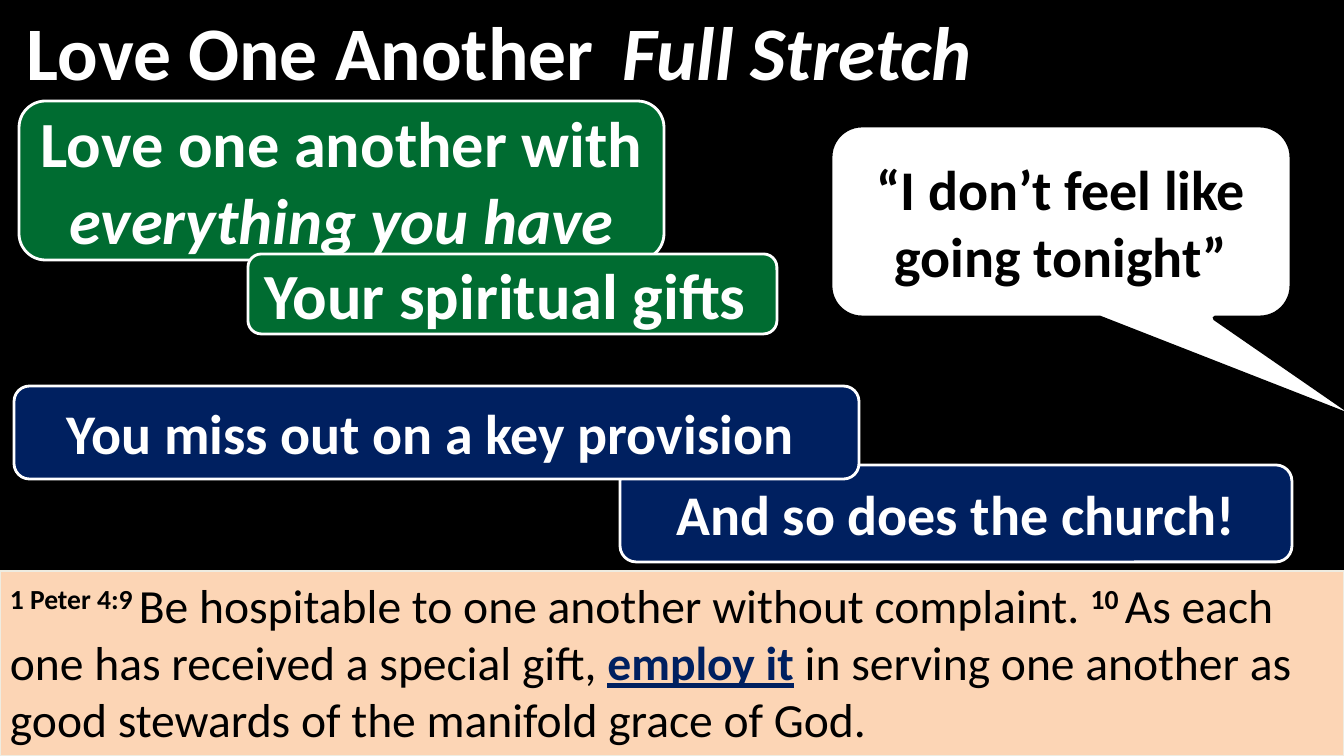
from pptx import Presentation
from pptx.dml.color import RGBColor
from pptx.enum.shapes import MSO_SHAPE
from pptx.enum.text import MSO_ANCHOR, PP_ALIGN
from pptx.util import Pt

PX = 914400 / 100.8
BLACK, WHITE, GREEN, NAVY = "000000", "FFFFFF", "006C31", "002060"
PEACH, CREAM = "FCD5B5", "EEECE1"
BOLD, ITALIC, UNDERLINE, RAISED = "bold", "italic", "underline", "raised"


def color(value):
    return RGBColor.from_string(value)


def write(box, runs, size, ink, align, anchor):
    frame = box.text_frame
    frame.word_wrap = True
    frame.vertical_anchor = anchor
    para = frame.paragraphs[0]
    para.alignment = align
    for text, *styles in runs:
        span = para.add_run()
        span.text = text
        font = span.font
        font.name = "Calibri"
        font.size = Pt(size)
        font.bold = BOLD in styles
        font.italic = ITALIC in styles
        font.underline = UNDERLINE in styles
        font.color.rgb = color(NAVY if UNDERLINE in styles else ink)
        if RAISED in styles:
            span._r.get_or_add_rPr().set("baseline", "30000")


deck = Presentation()
deck.slide_width, deck.slide_height = round(1344 * PX), round(756 * PX)
page = deck.slides.add_slide(deck.slide_layouts[6])
page.background.fill.solid()
page.background.fill.fore_color.rgb = color(BLACK)

titles = [
    (17, 597, [("Love One Another", BOLD)]),
    (613, 731, [("Full Stretch", BOLD, ITALIC)]),
]
for left, width, runs in titles:
    title = page.shapes.add_textbox(round(left * PX), 0, round(width * PX), round(101 * PX))
    write(title, runs, 54, WHITE, PP_ALIGN.LEFT, MSO_ANCHOR.MIDDLE)

verse = [
    ("1 Peter 4:9 ", BOLD, RAISED),
    ("Be hospitable to one another without complaint. ",),
    ("10 ", BOLD, RAISED),
    ("As each one has received a special gift, ",),
    ("employ it", BOLD, UNDERLINE),
    (" in serving one another as good stewards of the manifold grace of God.",),
]
ROUNDED = MSO_SHAPE.ROUNDED_RECTANGLE
CENTERED = (PP_ALIGN.CENTER, MSO_ANCHOR.MIDDLE)
TOP_LEFT = (PP_ALIGN.LEFT, MSO_ANCHOR.TOP)
blocks = [
    (ROUNDED, (19, 101, 645, 159), GREEN, WHITE, 2, 46, WHITE, CENTERED,
     [("Love one another with ", BOLD), ("everything you have", BOLD, ITALIC)]),
    (ROUNDED, (248, 254, 529, 80), GREEN, WHITE, 2, 46, WHITE, CENTERED,
     [("Your spiritual gifts ", BOLD)]),
    (MSO_SHAPE.RECTANGLE, (0, 571, 1344, 185), PEACH, CREAM, 1.5, 34, BLACK, TOP_LEFT, verse),
    (MSO_SHAPE.ROUNDED_RECTANGULAR_CALLOUT, (830, 125, 462, 193), WHITE, BLACK, 3.5, 40, BLACK,
     CENTERED, [("“I don’t feel like going tonight”", BOLD)]),
    (ROUNDED, (620, 465, 672, 97), NAVY, WHITE, 2, 40, WHITE, CENTERED,
     [("And so does the church!", BOLD)]),
    (ROUNDED, (14, 386, 845, 93), NAVY, WHITE, 2, 40, WHITE, CENTERED,
     [("You miss out on a key provision ", BOLD)]),
]
for kind, place, fill, edge, edge_width, size, ink, layout, runs in blocks:
    box = page.shapes.add_shape(kind, *(round(length * PX) for length in place))
    box.shadow.inherit = False
    box.fill.solid()
    box.fill.fore_color.rgb = color(fill)
    box.line.color.rgb = color(edge)
    box.line.width = Pt(edge_width)
    if kind == MSO_SHAPE.ROUNDED_RECTANGULAR_CALLOUT:
        box.adjustments[0] = 0.66
        box.adjustments[1] = 1.04
    write(box, runs, size, ink, *layout)

deck.save("out.pptx")
